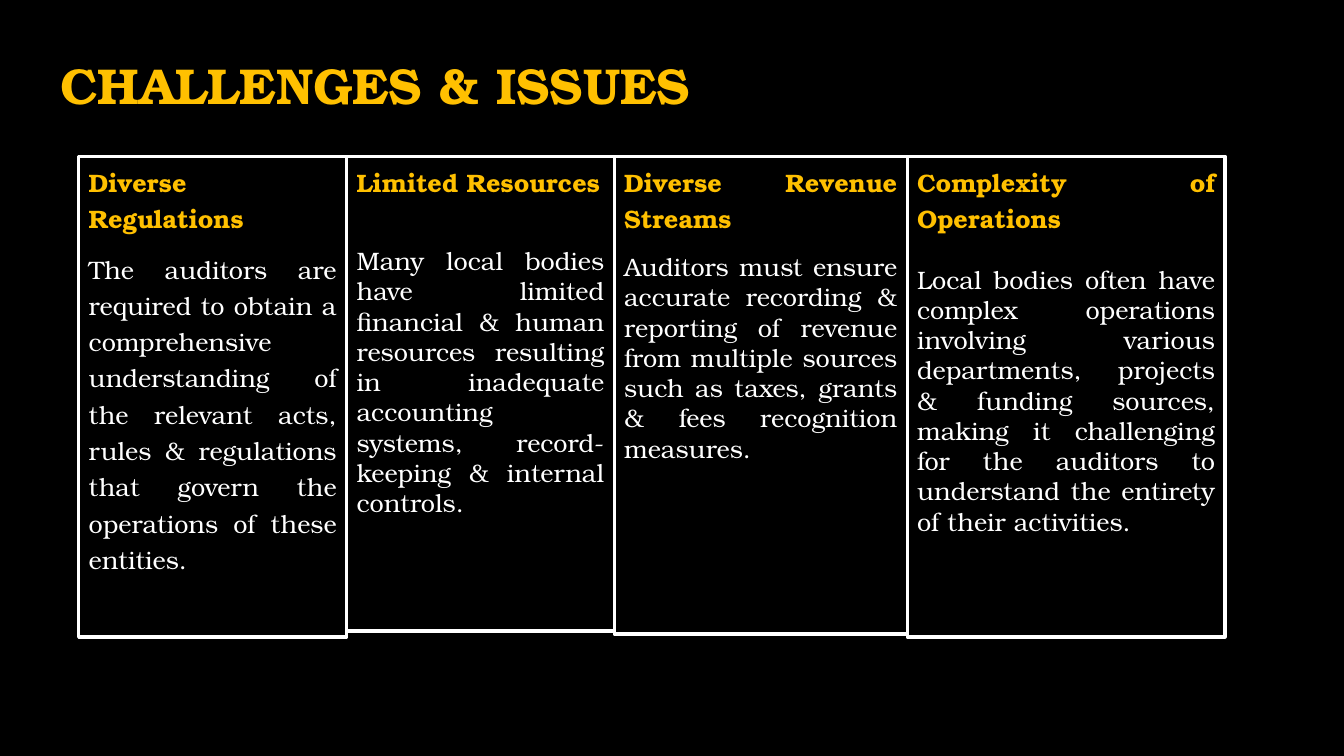
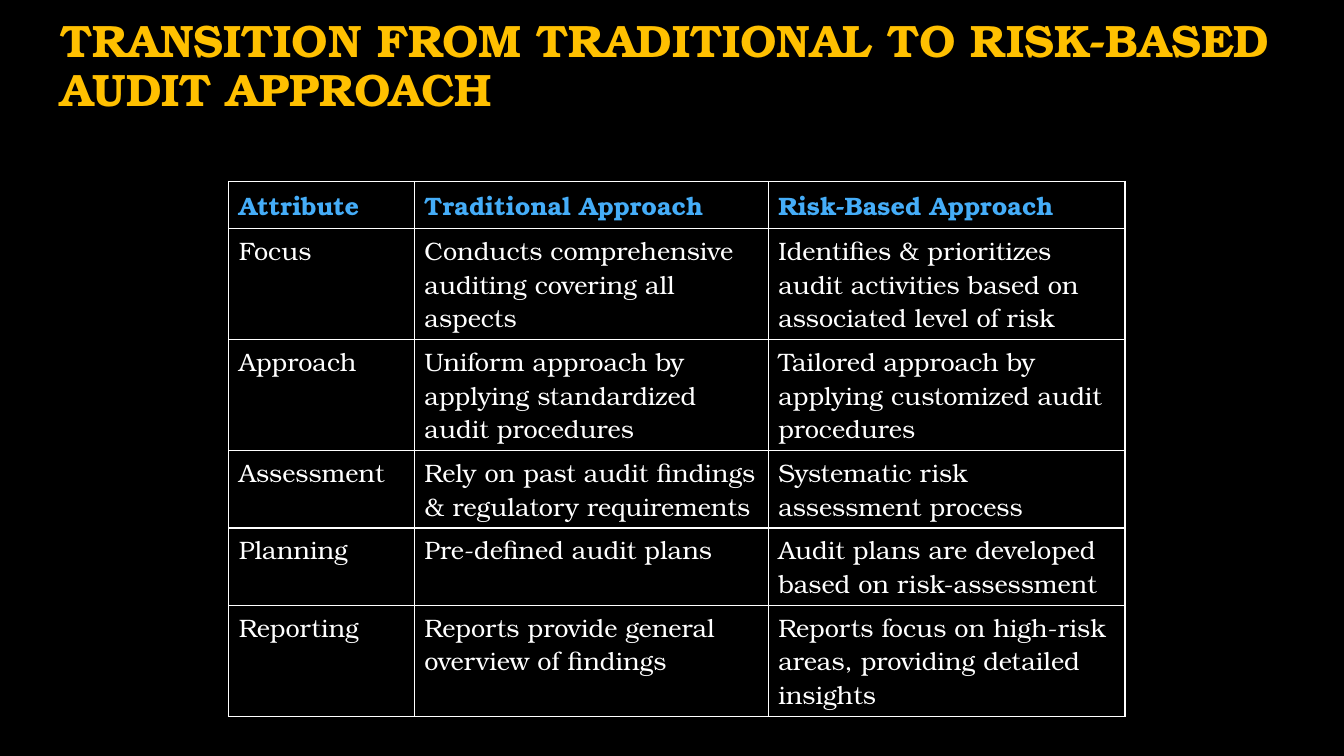
from lxml.etree import SubElement
from pptx import Presentation
from pptx.dml.color import RGBColor
from pptx.enum.shapes import MSO_SHAPE as Preset
from pptx.enum.text import MSO_ANCHOR as Anchor, MSO_AUTO_SIZE as AutoSize, PP_ALIGN as Align
from pptx.oxml.ns import qn
from pptx.util import Inches, Pt

BLACK, WHITE, GOLD, BLUE = "000000", "FFFFFF", "FFC000", "45ADF8"
FONT = "TeX Gyre Bonum"
TITLE_LAYOUT, TITLE_ONLY_LAYOUT = 0, 5

BOX_LEFT, BOX_TOP = 5.85, 20.67
CHALLENGES = [
    (19.95, 63.6, "Diverse Regulations", 1.2, 10,
     "The auditors are required to obtain a comprehensive understanding of the relevant acts, "
     "rules & regulations that govern the operations of these entities."),
    (19.9, 62.8, "Limited Resources", 1.0, 34.2,
     "Many local bodies have limited financial & human resources resulting in inadequate "
     "accounting systems, record-keeping & internal controls."),
    (21.8, 63.2, "Diverse Revenue Streams", 1.0, 12.6,
     "Auditors must ensure accurate recording & reporting of revenue from multiple sources "
     "such as taxes, grants & fees recognition measures."),
    (23.65, 63.6, "Complexity of Operations", 1.0, 21.6,
     "Local bodies often have complex operations involving various departments, projects & "
     "funding sources, making it challenging for the auditors to understand the entirety of "
     "their activities."),
]

COLUMN_WIDTHS = [13.8, 26.33, 26.55]
HEADER_HEIGHT, LINE_HEIGHT, CELL_PADDING = 6.27, 4.44, 1.34
LINES_PER_ROW = [3, 3, 2, 2, 3]
APPROACHES = [
    ("Attribute", "Traditional Approach", "Risk-Based Approach"),
    ("Focus", "Conducts comprehensive auditing covering all aspects",
     "Identifies & prioritizes audit activities based on associated level of risk"),
    ("Approach", "Uniform approach by applying standardized audit procedures",
     "Tailored approach by applying customized audit procedures"),
    ("Assessment", "Rely on past audit findings & regulatory requirements",
     "Systematic risk assessment process"),
    ("Planning", "Pre-defined audit plans",
     "Audit plans are developed based on risk-assessment"),
    ("Reporting", "Reports provide general overview of findings",
     "Reports focus on high-risk areas, providing detailed insights"),
]


def color(value):
    """Turn a hex string into a colour."""
    return RGBColor.from_string(value)


class SlideBuilder:
    """Hold the deck's style and current slide; lengths are percentages of the slide."""

    def __init__(self):
        """Start a wide deck with a black background."""
        self.deck = Presentation()
        self.deck.slide_width, self.deck.slide_height = Inches(13.33), Inches(7.5)
        background = self.deck.slide_master.background.fill
        background.solid()
        background.fore_color.rgb = color(BLACK)
        self.page = None

    def across(self, share):
        """Convert a percentage of the slide's width."""
        return round(self.deck.slide_width * share / 100)

    def down(self, share):
        """Convert a percentage of the slide's height."""
        return round(self.deck.slide_height * share / 100)

    def place(self, shape, left, top, width, height):
        """Move and size a shape."""
        shape.left, shape.top = self.across(left), self.down(top)
        shape.width, shape.height = self.across(width), self.down(height)

    def set_text(self, para, text, size, ink, bold=False, align=Align.LEFT, spacing=1.0, before=0):
        """Fill one paragraph and set its format."""
        para.text = text
        para.alignment, para.line_spacing = align, spacing
        para.space_before, para.space_after = Pt(before), Pt(0)
        font = para.font
        font.name, font.size, font.bold = FONT, Pt(size), bold
        font.color.rgb = color(ink)

    def new_page(self, layout, title, size):
        """Add a slide with its gold title."""
        self.page = self.deck.slides.add_slide(self.deck.slide_layouts[layout])
        heading = self.page.shapes.title
        self.place(heading, 3.75, 4, 92.18, 12)
        frame = heading.text_frame
        frame.auto_size, frame.vertical_anchor = AutoSize.NONE, Anchor.BOTTOM
        self.set_text(frame.paragraphs[0], title, size, GOLD, bold=True, spacing=0.9)

    def text_box(self, box, area, heading, body, spacing, gap):
        """Format an outlined box with a heading and a justified text."""
        self.place(box, *area)
        box.fill.background()
        box.line.color.rgb = color(WHITE)
        box.line.width = Pt(2.25)
        frame = box.text_frame
        frame.word_wrap = True
        frame.auto_size, frame.vertical_anchor = AutoSize.NONE, Anchor.TOP
        self.set_text(frame.paragraphs[0], heading, 18, GOLD, True, Align.JUSTIFY, 1.2, 10)
        self.set_text(frame.add_paragraph(), body, 18, WHITE, False, Align.JUSTIFY, spacing, gap)

    def rectangle(self):
        """Add a plain rectangle without a shadow."""
        box = self.page.shapes.add_shape(Preset.RECTANGLE, 0, 0, 0, 0)
        box.shadow.inherit = False
        return box

    def cell_borders(self, cell):
        """Draw a thin white line on every side of a cell."""
        properties = cell._tc.get_or_add_tcPr()
        for index, side in enumerate(("a:lnL", "a:lnR", "a:lnT", "a:lnB")):
            line = SubElement(properties, qn(side), w=str(Pt(1)))
            fill = SubElement(line, qn("a:solidFill"))
            SubElement(fill, qn("a:srgbClr"), val=WHITE)
            properties.insert(index, line)

    def table(self, left, top, widths, heights, rows):
        """Add a bordered table with a blue heading row."""
        frame = self.page.shapes.add_table(
            len(rows), len(widths), self.across(left), self.down(top),
            self.across(sum(widths)), self.down(sum(heights)))
        grid = frame.table
        grid.first_row = grid.horz_banding = False
        for column, width in zip(grid.columns, widths):
            column.width = self.across(width)
        for index, (row, height, texts) in enumerate(zip(grid.rows, heights, rows)):
            row.height = self.down(height)
            header = index == 0
            for cell, text in zip(row.cells, texts):
                cell.fill.solid()
                cell.fill.fore_color.rgb = color(BLACK)
                self.cell_borders(cell)
                self.set_text(cell.text_frame.paragraphs[0], text, 18, BLUE if header else WHITE,
                              bold=header, spacing=Pt(26.4 if header else 24))


def main():
    """Build both slides and save the deck."""
    builder = SlideBuilder()

    builder.new_page(TITLE_LAYOUT, "CHALLENGES & ISSUES", 36)
    left = BOX_LEFT
    for index, (width, height, heading, spacing, gap, body) in enumerate(CHALLENGES):
        box = builder.rectangle() if index else builder.page.placeholders[1]
        builder.text_box(box, (left, BOX_TOP, width, height), heading, body, spacing, gap)
        left += width

    builder.new_page(TITLE_ONLY_LAYOUT,
                     "TRANSITION FROM TRADITIONAL TO RISK-BASED AUDIT APPROACH", 32.4)
    heights = [HEADER_HEIGHT] + [lines * LINE_HEIGHT + CELL_PADDING for lines in LINES_PER_ROW]
    builder.table(17.03, 24, COLUMN_WIDTHS, heights, APPROACHES)

    builder.deck.save("out.pptx")


if __name__ == "__main__":
    main()
